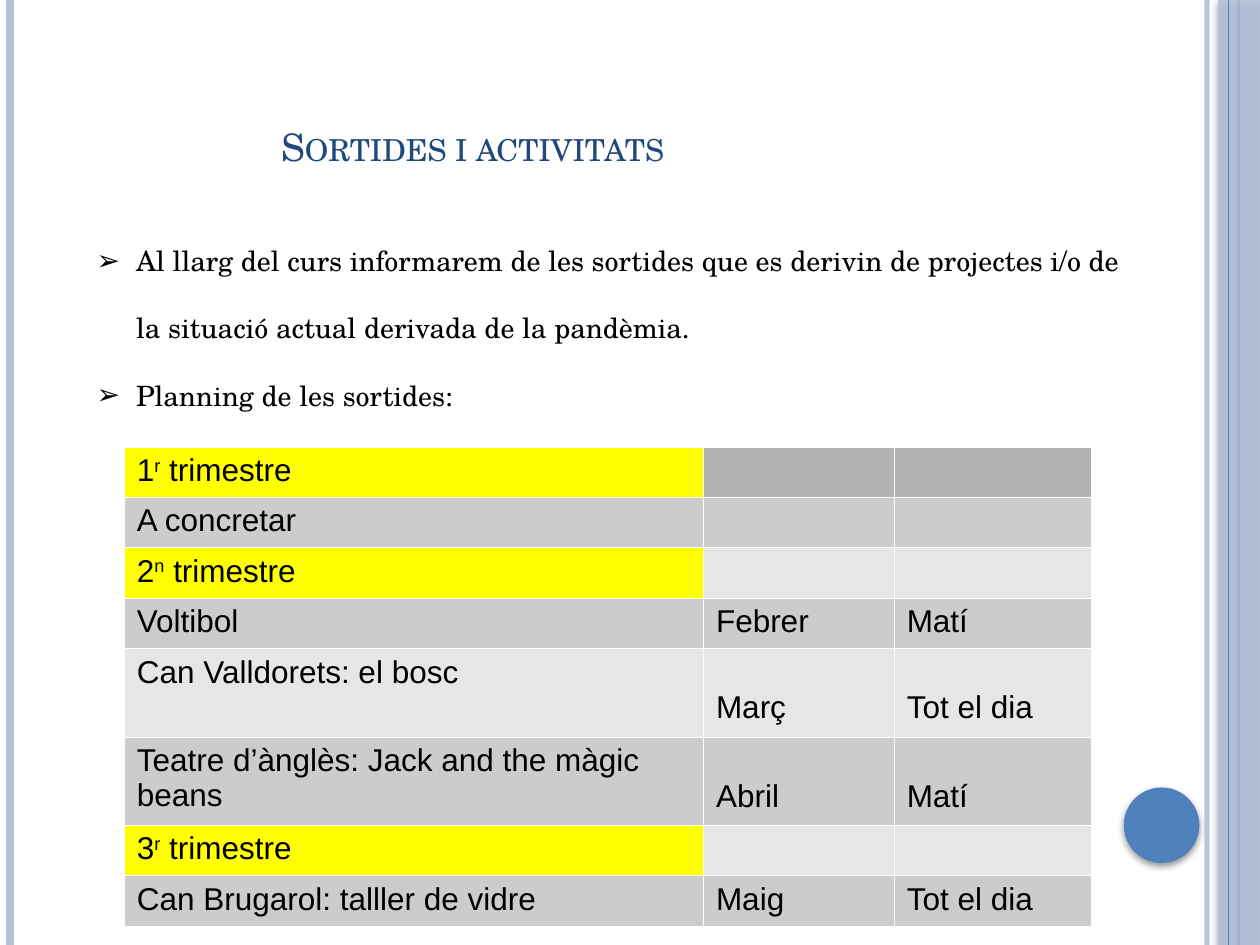
from lxml import etree
from pptx import Presentation
from pptx.dml.color import RGBColor
from pptx.enum import shapes, text
from pptx.oxml import parse_xml
from pptx.oxml.ns import qn
from pptx.util import Pt

# Content
TITLE = "Sortides i activitats "
POINTS = [
    "Al llarg del curs informarem de les sortides que es derivin de projectes "
    "i/o de la situació actual derivada de la pandèmia.",
    "Planning de les sortides:",
]
# A tuple is a term heading: number, raised ending, rest
ROWS = [
    [("1", "r", " trimestre"), "", ""],
    ["A concretar", "", ""],
    [("2", "n", " trimestre"), "", ""],
    ["Voltibol", "Febrer", "Matí"],
    ["Can Valldorets: el bosc", "Març", "Tot el dia"],
    ["Teatre d’ànglès: Jack and the màgic beans", "Abril", "Matí"],
    [("3", "r", " trimestre"), "", ""],
    ["Can Brugarol: talller de vidre", "Maig", "Tot el dia"],
]
TALL = (4, 5)  # rows two lines high
COLS = (331, 109, 112.5)
LOW, HIGH, LINE = 28.8, 50.4, 20.4
SERIF, SANS = "TeX Gyre Schola", "Arial"
PALE, BLUE = "B3C1DB", "4F81BD"
# x, colour, width, opacity in percent
RULES = [(689.8, PALE, 3, 93), (5.8, PALE, 4.5, 100), (707.8, BLUE, 1.5, 100)]
EDGE = (702, BLUE, 0.75, 100)
NS = 'xmlns:a="http://schemas.openxmlformats.org/drawingml/2006/main"'


def rgb(code):
    return RGBColor.from_string(code)


def paint(fill, code, alpha=100):
    fill.solid()
    fill.fore_color.rgb = rgb(code)
    if alpha < 100:
        tint = fill._xPr.find(qn("a:solidFill"))[0]
        etree.SubElement(tint, qn("a:alpha"), val=str(alpha * 1000))


def style(run, font, size, code):
    run.font.name, run.font.size = font, Pt(size)
    run.font.color.rgb = rgb(code)


def rule(x, code, width, alpha):
    line = slide.shapes.add_connector(
        shapes.MSO_CONNECTOR.STRAIGHT, Pt(x), 0, Pt(x), Pt(540))
    line.line.width = Pt(width)
    paint(line.line.fill, code, alpha)
    etree.SubElement(line._element.spPr, qn("a:effectLst"))


def solid(kind, x, y, w, h, code, alpha=100):
    shape = slide.shapes.add_shape(kind, Pt(x), Pt(y), Pt(w), Pt(h))
    paint(shape.fill, code, alpha)
    shape.line.fill.background()
    shape.shadow.inherit = False
    glow = shape._element.spPr.find(qn("a:effectLst"))
    glow.append(parse_xml(
        f'<a:outerShdw {NS} blurRad="{Pt(4)}" dist="{Pt(2)}" dir="5400000" '
        'rotWithShape="0"><a:srgbClr val="000000"><a:alpha val="40000"/>'
        '</a:srgbClr></a:outerShdw>'))


def border(cell):
    props = cell._tc.get_or_add_tcPr()
    for i, side in enumerate(("lnL", "lnR", "lnT", "lnB")):
        props.insert(i, parse_xml(
            f'<a:{side} {NS} w="{Pt(0.06)}"><a:solidFill>'
            f'<a:srgbClr val="FFFFFF"/></a:solidFill></a:{side}>'))


def shade(r, c):
    if isinstance(ROWS[r][c], tuple):
        return "FFFF00"
    if r == 0:
        return "B3B3B3"
    return "CCCCCC" if r % 2 else "E6E6E6"


deck = Presentation()
deck.slide_width, deck.slide_height = Pt(720), Pt(540)
slide = deck.slides.add_slide(deck.slide_layouts[5])

# Side rules, band and disc
for item in RULES:
    rule(*item)
solid(shapes.MSO_SHAPE.RECTANGLE, 696, 0, 24, 540, PALE, 87)
rule(*EDGE)
solid(shapes.MSO_SHAPE.OVAL, 642.2, 450, 43.2, 43.2, BLUE)

# Title
title = slide.shapes.title
title.left, title.top, title.width, title.height = (
    Pt(36.7), Pt(31.7), Pt(471.6), Pt(68.4))
frame = title.text_frame
frame.text = TITLE
frame.auto_size = text.MSO_AUTO_SIZE.NONE
frame.vertical_anchor = text.MSO_ANCHOR.BOTTOM
para = frame.paragraphs[0]
para.alignment = text.PP_ALIGN.CENTER
style(para.runs[0], SERIF, 21.6, "1F497D")
para.runs[0].font._element.set("cap", "small")

# Bulleted text
box = slide.shapes.add_textbox(Pt(48.2), Pt(116.6), Pt(612), Pt(189.4))
frame = box.text_frame
frame.word_wrap = True
frame.text = "\n".join(POINTS)
for para in frame.paragraphs:
    para.line_spacing = 2.0
    style(para.runs[0], SERIF, 16, "000000")
    props = para._p.get_or_add_pPr()
    props.set("marL", str(Pt(22.5)))
    props.set("indent", str(Pt(-22.5)))
    tone = etree.SubElement(props, qn("a:buClr"))
    etree.SubElement(tone, qn("a:srgbClr"), val="000000")
    etree.SubElement(props, qn("a:buFont"), typeface=SANS)
    etree.SubElement(props, qn("a:buChar"), char="➢")

# Table of outings
highs = [HIGH if r in TALL else LOW for r in range(len(ROWS))]
table = slide.shapes.add_table(
    len(ROWS), len(COLS), Pt(71), Pt(255.2), Pt(sum(COLS)), Pt(sum(highs))).table
for c, width in enumerate(COLS):
    table.columns[c].width = Pt(width)
for r, row in enumerate(ROWS):
    table.rows[r].height = Pt(highs[r])
    for c, entry in enumerate(row):
        cell = table.cell(r, c)
        paint(cell.fill, shade(r, c))
        border(cell)
        if r in TALL and c:
            cell.margin_top = Pt(3.6 + LINE)  # sits on the second line
        para = cell.text_frame.paragraphs[0]
        para.font.size = Pt(18)
        parts = entry if isinstance(entry, tuple) else (entry,)
        for i, part in enumerate(parts):
            if part:
                run = para.add_run()
                run.text = part
                style(run, SANS, 18, "000000")
                run.font.bold = False
                if i == 1:
                    run.font._element.set("baseline", "30000")

deck.save("out.pptx")
